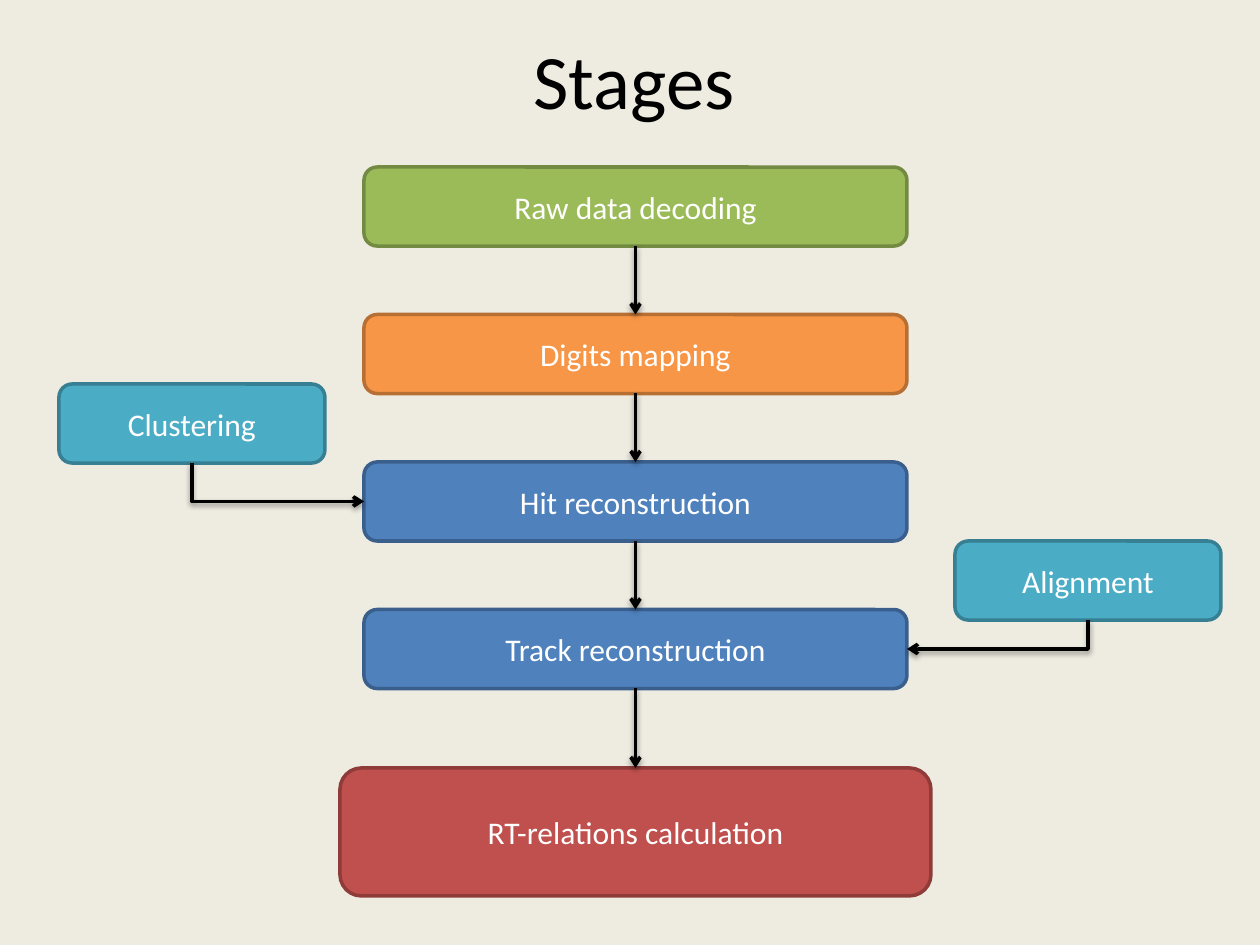
import dataclasses

import lxml.etree
import pptx
import pptx.dml.color
import pptx.enum.shapes
import pptx.enum.text
import pptx.oxml
import pptx.oxml.ns
import pptx.util

PX = 914400 / 126
SHAPES = pptx.enum.shapes.MSO_SHAPE
CONNECTORS = pptx.enum.shapes.MSO_CONNECTOR
TOP, LEFT, BOTTOM, RIGHT = range(4)


@dataclasses.dataclass(frozen=True)
class Theme:
    font: str = "Calibri"
    title_size: int = 44
    box_size: int = 18
    line_width: int = 2
    background: str = "EEECE1"
    ink: str = "000000"
    box_text: str = "FFFFFF"
    # fill and outline pairs
    green: tuple = ("9BBB59", "738A42")
    orange: tuple = ("F79646", "B76F34")
    blue: tuple = ("4F81BD", "3A5F8C")
    red: tuple = ("C0504D", "8E3B39")
    teal: tuple = ("4BACC6", "377F92")


THEME = Theme()

SHADOW = (
    f'<a:effectLst {pptx.oxml.ns.nsdecls("a")}>'
    '<a:outerShdw blurRad="40000" dist="20000" dir="5400000" rotWithShape="0">'
    f'<a:srgbClr val="{THEME.ink}"><a:alpha val="38000"/></a:srgbClr>'
    '</a:outerShdw></a:effectLst>'
)


def emu(px):
    return pptx.util.Emu(round(px * PX))


def rgb(color):
    return pptx.dml.color.RGBColor.from_string(color)


def write(tf, text, size, color):
    tf.word_wrap = True
    tf.vertical_anchor = pptx.enum.text.MSO_ANCHOR.MIDDLE
    p = tf.paragraphs[0]
    p.alignment = pptx.enum.text.PP_ALIGN.CENTER
    r = p.add_run()
    r.text = text
    r.font.name = THEME.font
    r.font.size = pptx.util.Pt(size)
    r.font.color.rgb = rgb(color)


def add_title(slide, text, x, y, w, h):
    sp = slide.shapes.title
    sp.left, sp.top, sp.width, sp.height = map(emu, (x, y, w, h))
    write(sp.text_frame, text, THEME.title_size, THEME.ink)


def add_stage(slide, text, colors, x, y, w, h):
    sp = slide.shapes.add_shape(SHAPES.ROUNDED_RECTANGLE, *map(emu, (x, y, w, h)))
    sp.shadow.inherit = False
    fill, outline = colors
    sp.fill.solid()
    sp.fill.fore_color.rgb = rgb(fill)
    sp.line.color.rgb = rgb(outline)
    sp.line.width = pptx.util.Pt(THEME.line_width)
    write(sp.text_frame, text, THEME.box_size, THEME.box_text)
    return sp


def style_arrow(cxn):
    cxn.line.color.rgb = rgb(THEME.ink)
    cxn.line.width = pptx.util.Pt(THEME.line_width)
    ln = cxn.line._get_or_add_ln()
    lxml.etree.SubElement(ln, pptx.oxml.ns.qn("a:tailEnd"), type="arrow")
    ln.addnext(pptx.oxml.parse_xml(SHADOW))


def add_down_arrow(slide, upper, lower):
    cxn = slide.shapes.add_connector(CONNECTORS.STRAIGHT, 0, 0, 0, 0)
    cxn.begin_connect(upper, BOTTOM)
    cxn.end_connect(lower, TOP)
    style_arrow(cxn)


def add_side_arrow(slide, helper, stage):
    """Run from the helper's bottom straight down, then across to the stage's near side."""
    x1, y1 = helper.left + helper.width // 2, helper.top + helper.height
    rightward = helper.left < stage.left
    x2 = stage.left if rightward else stage.left + stage.width
    y2 = stage.top + stage.height // 2
    across, down = abs(x2 - x1), y2 - y1
    cxn = slide.shapes.add_connector(CONNECTORS.ELBOW, 0, 0, 0, 0)
    # The one-bend preset goes across first, so it is turned a quarter.
    cxn.left, cxn.top = (x1 + x2 - down) // 2, (y1 + y2 - across) // 2
    cxn.width, cxn.height = down, across
    sp_pr = cxn._element.spPr
    sp_pr.find(pptx.oxml.ns.qn("a:prstGeom")).set("prst", "bentConnector2")
    xfrm = sp_pr.find(pptx.oxml.ns.qn("a:xfrm"))
    xfrm.set("rot", "16200000" if rightward else "5400000")
    if rightward:
        xfrm.set("flipH", "1")
    style_arrow(cxn)


def add_flow(slide, x, y, w, h):
    """Stack the four stages and the wider, taller result over the given box."""
    box_h, pitch, inset = 79, 147.5, 24
    result_h = 128
    rows = (
        ("Raw data decoding", THEME.green),
        ("Digits mapping", THEME.orange),
        ("Hit reconstruction", THEME.blue),
        ("Track reconstruction", THEME.blue),
    )
    stages = [
        add_stage(slide, text, colors, x + inset, y + i * pitch, w - 2 * inset, box_h)
        for i, (text, colors) in enumerate(rows)
    ]
    stages.append(add_stage(slide, "RT-relations calculation", THEME.red,
                            x, y + h - result_h, w, result_h))
    for upper, lower in zip(stages, stages[1:]):
        add_down_arrow(slide, upper, lower)
    return stages


def add_helper(slide, text, stage, x, y, w, h):
    helper = add_stage(slide, text, THEME.teal, x, y, w, h)
    add_side_arrow(slide, helper, stage)


def main():
    prs = pptx.Presentation()
    prs.slide_width, prs.slide_height = emu(1260), emu(945)
    slide = prs.slides.add_slide(prs.slide_layouts.get_by_name("Title Only"))
    slide.background.fill.solid()
    slide.background.fill.fore_color.rgb = rgb(THEME.background)

    add_title(slide, "Stages", 67, 0, 1134, 158)
    stages = add_flow(slide, 340, 167, 591, 729)
    add_helper(slide, "Clustering", stages[2], 59, 384, 266, 79)
    add_helper(slide, "Alignment", stages[3], 955, 541, 266, 79)
    prs.save("out.pptx")


if __name__ == "__main__":
    main()
